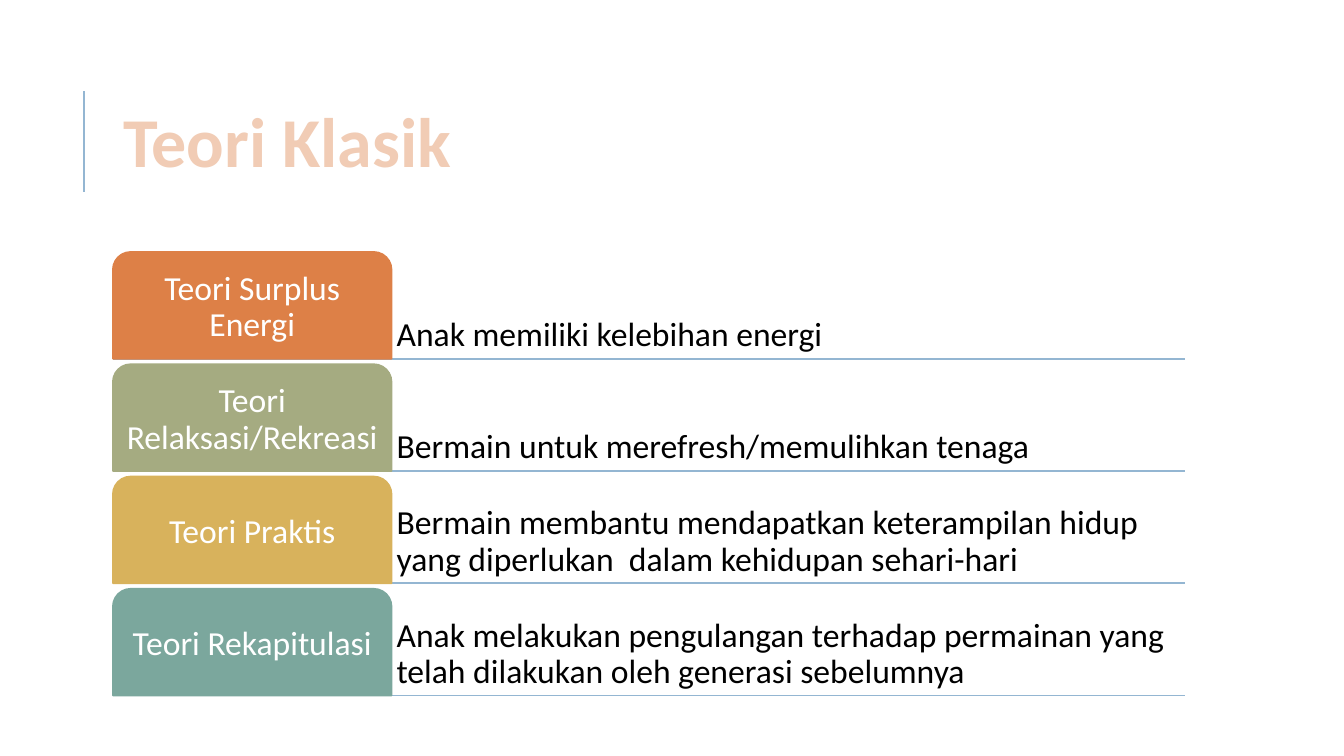
from lxml.etree import SubElement
from pptx import Presentation
from pptx.dml.color import RGBColor
from pptx.enum.shapes import MSO_CONNECTOR, MSO_SHAPE
from pptx.enum.text import MSO_ANCHOR, MSO_AUTO_SIZE, PP_ALIGN
from pptx.oxml.ns import qn
from pptx.util import Inches, Pt

FONT = "Calibri"
WHITE = RGBColor(0xFF, 0xFF, 0xFF)
BLACK = RGBColor(0x00, 0x00, 0x00)
BLUE = RGBColor(0x94, 0xB6, 0xD2)
PEACH = RGBColor(0xF1, 0xCC, 0xB5)
ORANGE = RGBColor(0xDD, 0x80, 0x47)
OLIVE = RGBColor(0xA5, 0xAB, 0x81)
GOLD = RGBColor(0xD8, 0xB2, 0x5C)
TEAL = RGBColor(0x7B, 0xA7, 0x9D)

THEORIES = [
    ("Teori Surplus Energi", "Anak memiliki kelebihan energi", ORANGE),
    ("Teori Relaksasi/Rekreasi", "Bermain untuk merefresh/memulihkan tenaga", OLIVE),
    ("Teori Praktis",
     "Bermain membantu mendapatkan keterampilan hidup yang diperlukan  dalam kehidupan sehari-hari",
     GOLD),
    ("Teori Rekapitulasi",
     "Anak melakukan pengulangan terhadap permainan yang telah dilakukan oleh generasi sebelumnya",
     TEAL),
]
LABEL_SHARE = 0.26
ROW_SHARE = 0.95  # part of each row pitch that the row fills


def add_line(slide, start, end, width):
    line = slide.shapes.add_connector(
        MSO_CONNECTOR.STRAIGHT, *(Inches(length) for length in start + end))
    line.line.color.rgb = BLUE
    line.line.width = Pt(width)
    SubElement(line._element.spPr, qn("a:effectLst"))


def write_text(shape, text, size, color, align, anchor, spacing, bold=False):
    frame = shape.text_frame
    frame.word_wrap = True
    frame.auto_size = MSO_AUTO_SIZE.NONE
    frame.vertical_anchor = anchor
    paragraph = frame.paragraphs[0]
    paragraph.alignment = align
    paragraph.line_spacing = spacing
    run = paragraph.add_run()
    run.text = text
    run.font.name = FONT
    run.font.size = Pt(size)
    run.font.bold = bold
    run.font.color.rgb = color


def write_row_text(shape, text, color, align, anchor):
    frame = shape.text_frame
    frame.margin_left = frame.margin_right = Inches(0.05)
    frame.margin_top = frame.margin_bottom = Inches(0.05)
    write_text(shape, text, 24, color, align, anchor, 0.9)
    frame.paragraphs[0].space_after = Pt(8.4)


def add_title(slide, text, left, top, width, height):
    title = slide.shapes.title
    title.left, title.top = Inches(left), Inches(top)
    title.width, title.height = Inches(width), Inches(height)
    write_text(title, text, 50, PEACH, PP_ALIGN.LEFT, MSO_ANCHOR.MIDDLE, 0.8, bold=True)
    bar_left, bar_top = left - 0.29, top + 0.26
    add_line(slide, (bar_left, bar_top + 1), (bar_left, bar_top), 1.5)


def add_theory_row(slide, theory, left, top, width, height):
    name, description, color = theory
    label_width = width * LABEL_SHARE
    add_line(slide, (left, top + height), (left + width, top + height), 1.25)

    text_box = slide.shapes.add_textbox(
        Inches(left + label_width), Inches(top),
        Inches(width - label_width), Inches(height))
    write_row_text(text_box, description, BLACK, PP_ALIGN.LEFT, MSO_ANCHOR.BOTTOM)

    label = slide.shapes.add_shape(
        MSO_SHAPE.ROUND_2_SAME_RECTANGLE,
        Inches(left), Inches(top), Inches(label_width), Inches(height))
    label.shadow.inherit = False
    label.fill.solid()
    label.fill.fore_color.rgb = color
    label.line.color.rgb = color
    label.line.width = Pt(1.25)
    write_row_text(label, name, WHITE, PP_ALIGN.CENTER, MSO_ANCHOR.MIDDLE)


def add_theory_list(slide, theories, left, top, width, height):
    pitch = height / (len(theories) - 1 + ROW_SHARE)
    for index, theory in enumerate(theories):
        add_theory_row(slide, theory, left, top + index * pitch, width, pitch * ROW_SHARE)


def main():
    presentation = Presentation()
    presentation.slide_width, presentation.slide_height = Inches(13.33), Inches(7.5)
    slide = presentation.slides.add_slide(presentation.slide_layouts[5])
    add_title(slide, "Teori Klasik", 1.12, 0.64, 10.63, 1.64)
    add_theory_list(slide, THEORIES, 1.12, 2.5, 10.63, 4.4)
    presentation.save("out.pptx")


if __name__ == "__main__":
    main()
